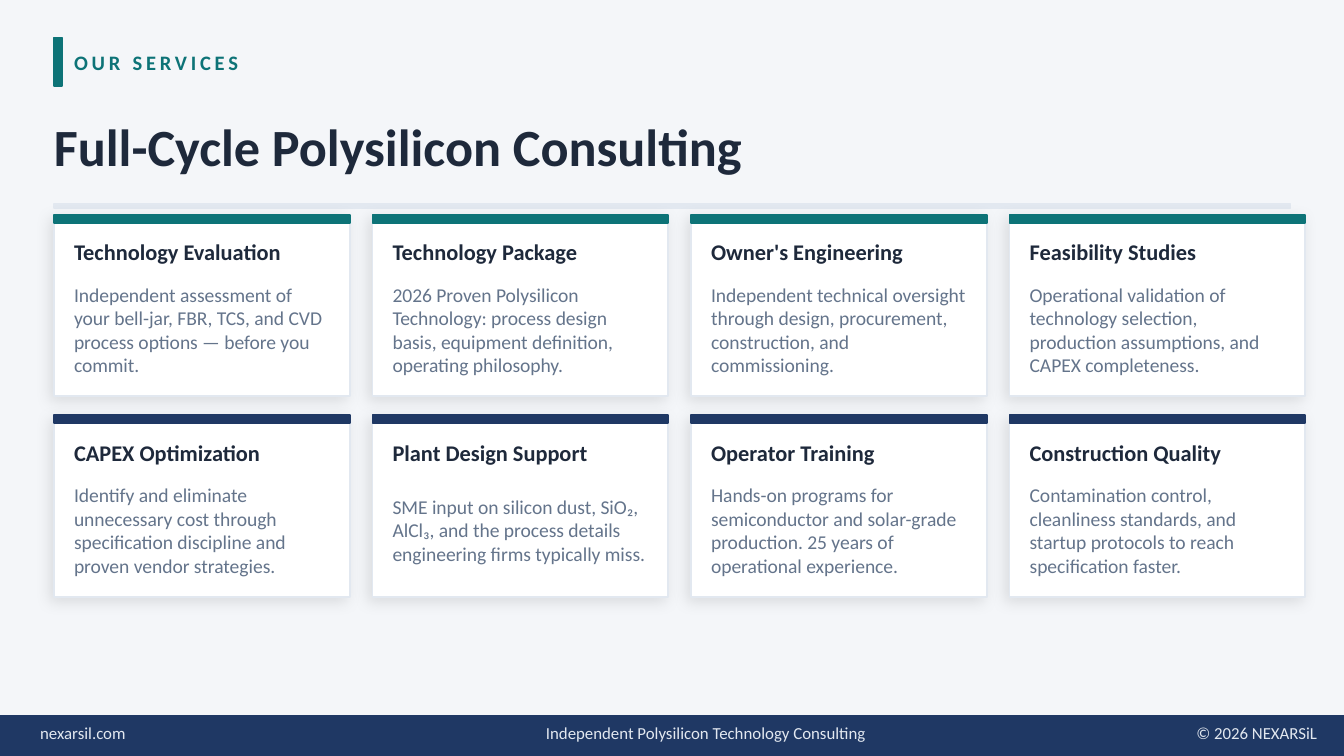
from dataclasses import dataclass

from lxml import etree
from pptx import Presentation
from pptx.dml.color import RGBColor
from pptx.enum.shapes import MSO_SHAPE
from pptx.enum.text import MSO_ANCHOR, MSO_AUTO_SIZE, PP_ALIGN
from pptx.oxml.ns import qn
from pptx.util import Cm, Pt

RECTANGLE = MSO_SHAPE.RECTANGLE
MIDDLE = MSO_ANCHOR.MIDDLE
NO_FIT = MSO_AUTO_SIZE.NONE
LEFT, CENTER, RIGHT = PP_ALIGN.LEFT, PP_ALIGN.CENTER, PP_ALIGN.RIGHT
TITLE_ONLY = 5


@dataclass(frozen=True)
class Theme:
    """Colours, font and type sizes of the deck."""

    font: str = "Calibri"
    background: str = "F4F6F9"
    surface: str = "FFFFFF"
    border: str = "E2E8F0"
    teal: str = "0D7377"
    navy: str = "1F3864"
    ink: str = "1E293B"
    muted: str = "64748B"
    title_size: float = 28
    heading_size: float = 12
    label_size: float = 11
    body_size: float = 10.5
    footer_size: float = 9


@dataclass(frozen=True)
class Box:
    """A rectangle measured in centimetres."""

    left: float
    top: float
    width: float
    height: float

    def inner(self, left, top, width, height):
        """Return a box placed relative to this one."""
        return Box(self.left + left, self.top + top, width, height)

    def lengths(self):
        """Return the four measures as slide lengths."""
        return [Cm(v) for v in (self.left, self.top, self.width, self.height)]


THEME = Theme()
SERVICES = [
    (THEME.teal, [
        ("Technology Evaluation", "Independent assessment of your bell-jar, FBR, TCS, and CVD process options — before you commit."),
        ("Technology Package", "2026 Proven Polysilicon Technology: process design basis, equipment definition, operating philosophy."),
        ("Owner's Engineering", "Independent technical oversight through design, procurement, construction, and commissioning."),
        ("Feasibility Studies", "Operational validation of technology selection, production assumptions, and CAPEX completeness."),
    ]),
    (THEME.navy, [
        ("CAPEX Optimization", "Identify and eliminate unnecessary cost through specification discipline and proven vendor strategies."),
        ("Plant Design Support", "SME input on silicon dust, SiO₂, AlCl₃, and the process details engineering firms typically miss."),
        ("Operator Training", "Hands-on programs for semiconductor and solar-grade production. 25 years of operational experience."),
        ("Construction Quality", "Contamination control, cleanliness standards, and startup protocols to reach specification faster."),
    ]),
]


def add_panel(page, box, fill, line=None):
    """Add a flat rectangle with a one-point outline."""
    panel = page.shapes.add_shape(RECTANGLE, *box.lengths())
    panel.shadow.inherit = False
    panel.fill.solid()
    panel.fill.fore_color.rgb = RGBColor.from_string(fill)
    panel.line.color.rgb = RGBColor.from_string(line or fill)
    panel.line.width = Pt(1)
    return panel


def add_soft_shadow(panel):
    """Give a panel a faint blurred shadow."""
    effects = panel._element.spPr.find(qn("a:effectLst"))
    shadow = etree.SubElement(effects, qn("a:outerShdw"), blurRad=str(Pt(8)),
                              dist=str(Pt(3)), dir=str(135 * 60000),
                              algn="bl", rotWithShape="0")
    color = etree.SubElement(shadow, qn("a:srgbClr"), val="000000")
    etree.SubElement(color, qn("a:alpha"), val="10000")


def write(shape, text, size, color, bold=False, align=LEFT):
    """Fill a shape with one formatted paragraph and return its run."""
    frame = shape.text_frame
    frame.text = text
    frame.word_wrap = True
    frame.auto_size = NO_FIT
    frame.vertical_anchor = MIDDLE
    frame.margin_left = frame.margin_right = 0
    frame.margin_top = frame.margin_bottom = 0
    para = frame.paragraphs[0]
    para.alignment = align
    span = para.runs[0]
    span.font.name = THEME.font
    span.font.size = Pt(size)
    span.font.bold = bold
    span.font.color.rgb = RGBColor.from_string(color)
    return span


def add_text(page, box, *content, **style):
    """Add a text box and return its run."""
    return write(page.shapes.add_textbox(*box.lengths()), *content, **style)


def add_header(page, box):
    """Place the section label, the title and the rule below them."""
    add_panel(page, box.inner(0, 0.05, 0.15, 0.91), THEME.teal)
    label = add_text(page, box.inner(0.38, 0, 20.32, 1.02), "OUR SERVICES",
                     THEME.label_size, THEME.teal, bold=True)
    label._r.get_or_add_rPr().set("spc", "200")
    title = page.shapes.title
    place = box.inner(0, 1.17, box.width, 1.83)
    title.left, title.top, title.width, title.height = place.lengths()
    write(title, "Full-Cycle Polysilicon Consulting",
          THEME.title_size, THEME.ink, bold=True)
    add_panel(page, box.inner(0, box.height - 0.08, box.width, 0.08), THEME.border)


def add_card(page, box, accent, heading, body):
    """Place one service card with its accent bar."""
    add_soft_shadow(add_panel(page, box, THEME.surface, THEME.border))
    add_panel(page, box.inner(0, 0, box.width, 0.15), accent)
    text_width = box.width - 0.76
    add_text(page, box.inner(0.38, 0.25, text_width, 0.91), heading,
             THEME.heading_size, THEME.ink, bold=True)
    add_text(page, box.inner(0.38, 1.22, text_width, 1.9), body,
             THEME.body_size, THEME.muted)


def add_services(page, box):
    """Lay the service cards out in a grid with equal gaps."""
    gap_x, gap_y = 0.43, 0.36
    columns = len(SERVICES[0][1])
    width = (box.width - gap_x * (columns - 1)) / columns
    height = (box.height - gap_y * (len(SERVICES) - 1)) / len(SERVICES)
    for row, (accent, cards) in enumerate(SERVICES):
        for column, (heading, body) in enumerate(cards):
            card = box.inner(column * (width + gap_x), row * (height + gap_y),
                             width, height)
            add_card(page, card, accent, heading, body)


def add_footer(page, box):
    """Place the footer band and its three texts."""
    add_panel(page, box, THEME.navy)
    for left, width, text, align in (
        (0.76, 7.62, "nexarsil.com", LEFT),
        (7.62, 11.43, "Independent Polysilicon Technology Consulting", CENTER),
        (18.29, 6.6, "© 2026 NEXARSiL", RIGHT),
    ):
        add_text(page, box.inner(left, 0, width, 0.66), text,
                 THEME.footer_size, THEME.border, align=align)


def main():
    """Build and save the deck."""
    deck = Presentation()
    deck.slide_width, deck.slide_height = Cm(25.4), Cm(14.29)
    page = deck.slides.add_slide(deck.slide_layouts[TITLE_ONLY])
    page.background.fill.solid()
    page.background.fill.fore_color.rgb = RGBColor.from_string(THEME.background)
    add_header(page, Box(1.02, 0.66, 23.37, 3.28))
    add_services(page, Box(1.02, 4.06, 23.65, 7.22))
    add_footer(page, Box(0, 13.53, 25.4, 0.76))
    deck.save("out.pptx")


if __name__ == "__main__":
    main()
